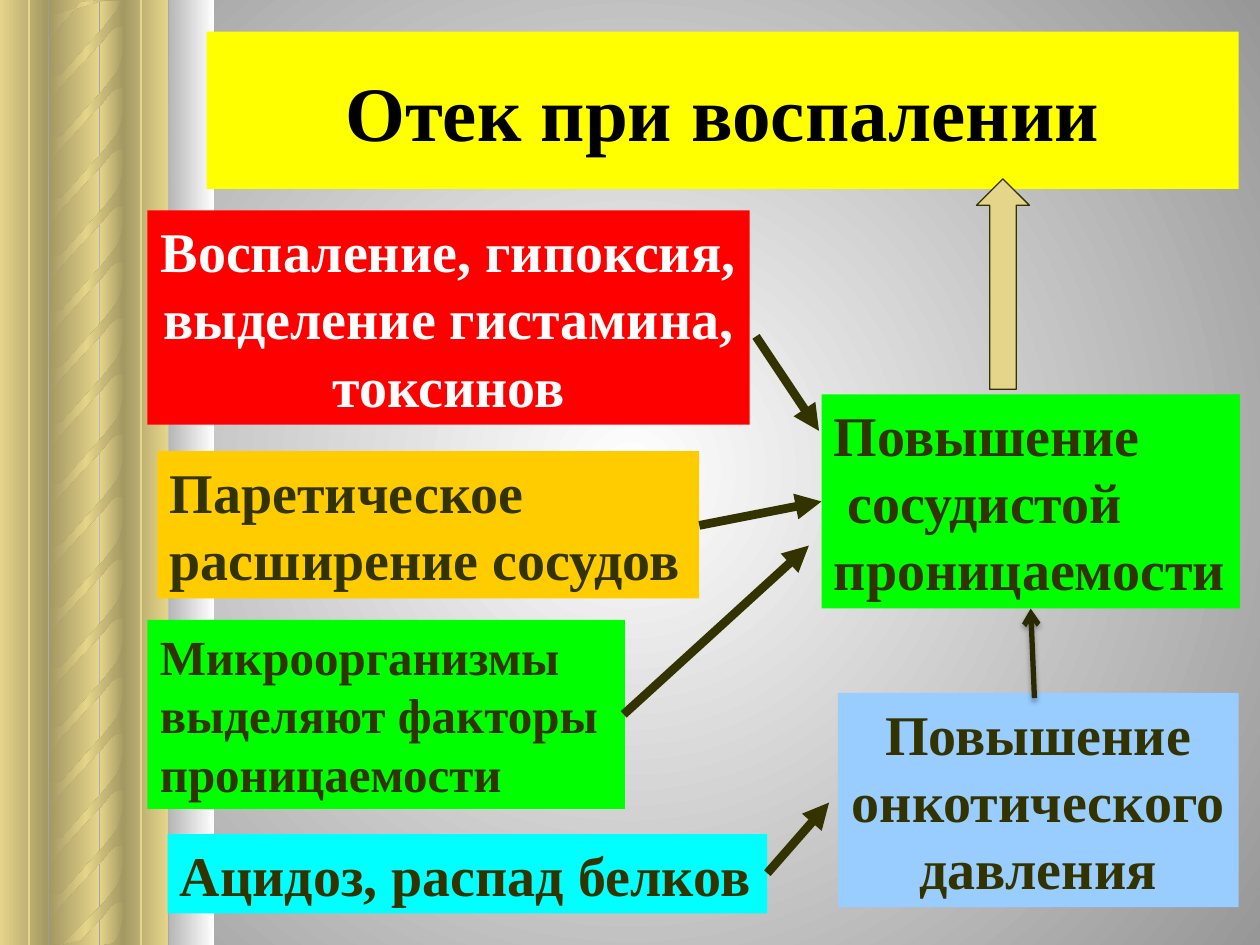
from lxml import etree
from pptx import Presentation
from pptx import util as u
from pptx.dml.color import RGBColor
from pptx.enum import shapes, text
from pptx.oxml import ns

COLS, ROWS = 100, 75
CELL = u.Inches(10) // COLS
FONT = "Times New Roman"

BLACK = RGBColor(0x00, 0x00, 0x00)
WHITE = RGBColor(0xFF, 0xFF, 0xFF)
GREY = RGBColor(0x97, 0x97, 0x97)
SILVER = RGBColor(0xB6, 0xB6, 0xB6)
SAND = RGBColor(0xE5, 0xD5, 0x8A)
BRONZE = RGBColor(0xA4, 0x98, 0x63)
OLIVE = RGBColor(0x33, 0x33, 0x00)
DARK_OLIVE = RGBColor(0x2A, 0x2A, 0x00)
YELLOW = RGBColor(0xFF, 0xFF, 0x00)
RED = RGBColor(0xFF, 0x00, 0x00)
GREEN = RGBColor(0x00, 0xFF, 0x00)
AMBER = RGBColor(0xFF, 0xCC, 0x00)
CYAN = RGBColor(0x00, 0xFF, 0xFF)
SKY = RGBColor(0x99, 0xCC, 0xFF)

BANDS = [
    (7.9, 2, SAND, BRONZE), (0, 3.8, SAND, BRONZE), (3.9, 4, BRONZE, SAND),
    (9.8, 3.5, BRONZE, SAND), (13.4, 3.6, SILVER, WHITE),
]
GROOVES = (2.3, 11.2)
TWIST_LEFT = 3.9
TWIST_TOPS = [-6.1, -1.2, 3.7, 8.6, 13.1, 17.5, 22, 26.4, 31.2,
              36.1, 41.1, 45.8, 50.5, 54.9, 59.4, 63.8, 68.3, 72.5]
TWIST = [
    (5.9, 0.9), (5.9, 3.4), (5.8, 3.3), (5.4, 3.3), (5.2, 3.4), (4.9, 3.6),
    (4.2, 4.5), (2.5, 6.3), (0.8, 8.2), (0.5, 8.7), (0.2, 9.3), (0.1, 10.1),
    (0, 11.2), (0, 6.3), (0, 6.8), (0.1, 7), (0.3, 7.1), (0.5, 7.2),
    (0.7, 7.2), (1, 7.1), (4.4, 3.3), (5.1, 2.4), (5.4, 2), (5.6, 1.5),
    (5.8, 0.7), (5.9, 0), (5.9, 2),
]

CARDS = [
    ((11.7, 16.7, 47.8, 17), RED, WHITE, 32, True,
     ["Воспаление, гипоксия,", "выделение гистамина,", "токсинов"]),
    ((65.2, 31.3, 33.2, 17), GREEN, OLIVE, 32, False,
     ["Повышение", " сосудистой", "проницаемости"]),
    ((12.5, 35.8, 43, 11.7), AMBER, OLIVE, 32, False,
     ["Паретическое", "расширение сосудов"]),
    ((13.3, 66.2, 47.6, 6.3), CYAN, OLIVE, 32, False,
     ["Ацидоз, распад белков"]),
    ((66.5, 55, 31.8, 17), SKY, OLIVE, 32, True,
     ["Повышение", "онкотического", "давления"]),
    ((11.7, 49.2, 37.9, 15), GREEN, OLIVE, 28, False,
     ["Микроорганизмы", "выделяют факторы", "проницаемости"]),
]
ARROWS = [
    (60, 26.7, 65, 34.2), (55.5, 41.7, 65.2, 39.8),
    (60.9, 69.3, 65.8, 63.7), (49.5, 56.7, 64.2, 43.3),
]


def grid(*cells):
    """Convert grid cells to slide lengths."""
    return [round(c * CELL) for c in cells]


def add_xml(parent, tag, **attrs):
    """Append a DrawingML element to its parent."""
    return etree.SubElement(parent, ns.qn(tag), {k: str(v) for k, v in attrs.items()})


def shade(fill, element, colors, radial=False):
    """Give a fill evenly spaced gradient stops, left to right or from the centre."""
    fill.gradient()
    grad = element.find(".//" + ns.qn("a:gradFill"))
    for child in list(grad):
        grad.remove(child)
    stops = add_xml(grad, "a:gsLst")
    for i, color in enumerate(colors):
        stop = add_xml(stops, "a:gs", pos=100000 * i // (len(colors) - 1))
        add_xml(stop, "a:srgbClr", val=color)
    if radial:
        circle = add_xml(grad, "a:path", path="circle")
        add_xml(circle, "a:fillToRect", l=50000, t=50000, r=50000, b=50000)
    else:
        add_xml(grad, "a:lin", ang=0, scaled=1)


def add_box(s, box, fill=None, kind=shapes.MSO_SHAPE.RECTANGLE):
    """Add a preset shape without outline or shadow."""
    sp = s.shapes.add_shape(kind, *grid(*box))
    sp.shadow.inherit = False
    sp.line.fill.background()
    if fill is not None:
        sp.fill.solid()
        sp.fill.fore_color.rgb = fill
    return sp


def add_line(s, ends, color, width, head=None, shadow=False):
    """Add a straight line with an optional arrowhead and soft shadow."""
    sp = s.shapes.add_connector(shapes.MSO_CONNECTOR.STRAIGHT, *grid(*ends))
    sp.line.color.rgb = color
    sp.line.width = u.Pt(width)
    if head:
        add_xml(sp.line._get_or_add_ln(), "a:tailEnd", type=head)
    effects = add_xml(sp._element.spPr, "a:effectLst")
    if shadow:
        outer = add_xml(effects, "a:outerShdw", blurRad=u.Pt(3.1), dist=u.Pt(1.8),
                        dir=5400000, rotWithShape=0)
        add_xml(add_xml(outer, "a:srgbClr", val=BLACK), "a:alpha", val=35000)


def add_text(sp, lines, size, color, align):
    """Write one bold paragraph per line."""
    tf = sp.text_frame
    for i, line in enumerate(lines):
        p = tf.add_paragraph() if i else tf.paragraphs[0]
        p.text = line
        p.alignment = align
        p.font.name, p.font.size, p.font.bold = FONT, u.Pt(size), True
        p.font.color.rgb = color
    return tf


def draw_column(s, box):
    """Draw the twisted column within its box."""
    x, y, _, h = box
    for dx, width, *colors in BANDS:
        sp = add_box(s, (x + dx, y, width, h))
        shade(sp.fill, sp._element, colors)
    for top in TWIST_TOPS:
        points = [grid(x + TWIST_LEFT + dx, y + min(max(top + dy, 0), h))
                  for dx, dy in TWIST]
        builder = s.shapes.build_freeform(*points[0])
        builder.add_line_segments(points[1:], close=True)
        sp = builder.convert_to_shape()
        sp.shadow.inherit = False
        sp.line.fill.background()
        shade(sp.fill, sp._element, (BRONZE, SAND, BRONZE))
    for dx in GROOVES:
        add_line(s, (x + dx, y, x + dx, y + h), SAND, 1)


def draw_title(s, box):
    """Draw the title banner."""
    tf = add_text(add_box(s, box, YELLOW), ["Отек при воспалении"], 44, BLACK,
                  text.PP_ALIGN.CENTER)
    tf.word_wrap = True
    tf.vertical_anchor = text.MSO_ANCHOR.MIDDLE


def draw_card(s, box, fill, color, size, centred, lines):
    """Draw one coloured card of the scheme."""
    align = text.PP_ALIGN.CENTER if centred else text.PP_ALIGN.LEFT
    tf = add_text(add_box(s, box, fill), lines, size, color, align)
    tf.word_wrap = False
    tf.auto_size = text.MSO_AUTO_SIZE.SHAPE_TO_FIT_TEXT
    tf.vertical_anchor = text.MSO_ANCHOR.TOP


def draw_result_arrow(s, box):
    """Draw the block arrow that leads to the title."""
    sp = add_box(s, box, SAND, shapes.MSO_SHAPE.UP_ARROW)
    sp.line.color.rgb = OLIVE
    sp.line.width = u.Pt(0.75)


def main():
    """Build the slide and save it."""
    prs = Presentation()
    prs.slide_width, prs.slide_height = grid(COLS, ROWS)
    s = prs.slides.add_slide(prs.slide_layouts[6])
    shade(s.background.fill, s._element, (WHITE, GREY), radial=True)
    draw_column(s, (0, 0, 17, ROWS))
    draw_title(s, (16.4, 2.5, 81.9, 12.5))
    for card in CARDS:
        draw_card(s, *card)
    for ends in ARROWS:
        add_line(s, ends, OLIVE, 5, "triangle")
    add_line(s, (82.1, 55.4, 81.8, 48.3), DARK_OLIVE, 3, "arrow", shadow=True)
    draw_result_arrow(s, (77.5, 14.2, 4.2, 16.7))
    prs.save("out.pptx")


if __name__ == "__main__":
    main()
